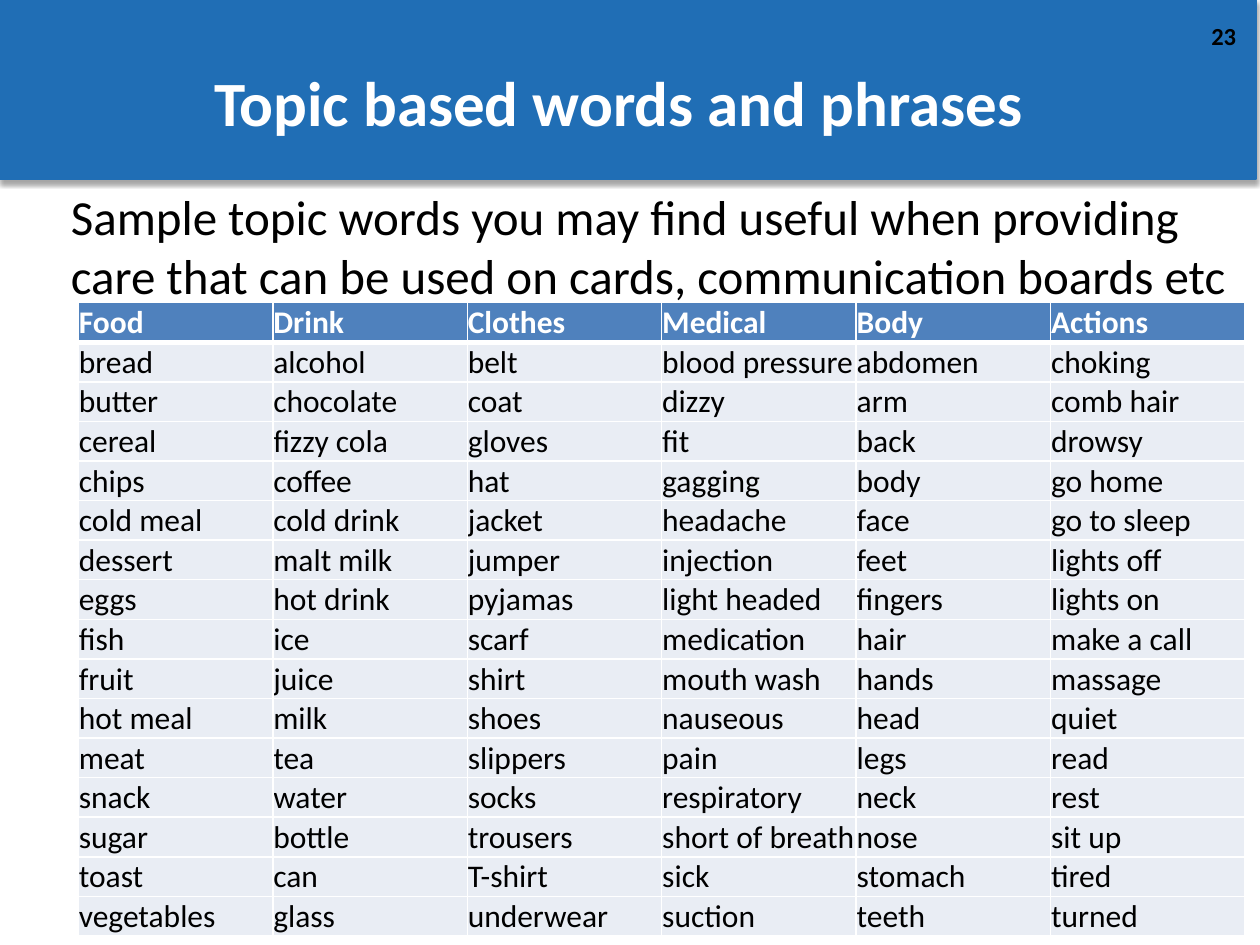
from lxml import etree
from pptx import Presentation
from pptx.dml.color import RGBColor
from pptx.enum.shapes import MSO_SHAPE
from pptx.enum.text import MSO_ANCHOR, PP_ALIGN
from pptx.oxml.ns import qn
from pptx.util import Cm, Pt

RECTANGLE = MSO_SHAPE.RECTANGLE
TOP, MIDDLE, BOTTOM = MSO_ANCHOR.TOP, MSO_ANCHOR.MIDDLE, MSO_ANCHOR.BOTTOM
LEFT, CENTER, RIGHT = PP_ALIGN.LEFT, PP_ALIGN.CENTER, PP_ALIGN.RIGHT

FONT = "Calibri"
BLACK, WHITE = "000000", "FFFFFF"
BANNER_BLUE, HEADER_BLUE, ROW_GREY = "206EB5", "4F81BD", "E9EDF4"

TOPICS = {
    "Food": ["bread", "butter", "cereal", "chips", "cold meal", "dessert", "eggs", "fish",
             "fruit", "hot meal", "meat", "snack", "sugar", "toast", "vegetables"],
    "Drink": ["alcohol", "chocolate", "fizzy cola", "coffee", "cold drink", "malt milk",
              "hot drink", "ice", "juice", "milk", "tea", "water", "bottle", "can", "glass"],
    "Clothes": ["belt", "coat", "gloves", "hat", "jacket", "jumper", "pyjamas", "scarf",
                "shirt", "shoes", "slippers", "socks", "trousers", "T-shirt", "underwear"],
    "Medical": ["blood pressure", "dizzy", "fit", "gagging", "headache", "injection",
                "light headed", "medication", "mouth wash", "nauseous", "pain",
                "respiratory", "short of breath", "sick", "suction"],
    "Body": ["abdomen", "arm", "back", "body", "face", "feet", "fingers", "hair",
             "hands", "head", "legs", "neck", "nose", "stomach", "teeth"],
    "Actions": ["choking", "comb hair", "drowsy", "go home", "go to sleep", "lights off",
                "lights on", "make a call", "massage", "quiet", "read", "rest", "sit up",
                "tired", "turned"],
}


def color(value):
    return RGBColor.from_string(value)


def style_paragraph(paragraph, size, font_color, bold=False, align=LEFT):
    paragraph.alignment = align
    font = paragraph.font
    font.name, font.size, font.bold = FONT, Pt(size), bold
    font.color.rgb = color(font_color)


def add_text(slide, box, text, size, font_color, bold=False, align=LEFT, anchor=TOP):
    shape = slide.shapes.add_textbox(*(Cm(length) for length in box))
    frame = shape.text_frame
    frame.word_wrap = True
    frame.vertical_anchor = anchor
    frame.text = text
    style_paragraph(frame.paragraphs[0], size, font_color, bold, align)


def add_shadow(shape):
    """Soft shadow straight below the shape."""
    shape.shadow.inherit = False
    effects = shape._element.spPr.find(qn("a:effectLst"))
    shadow = etree.SubElement(effects, qn("a:outerShdw"), blurRad=str(Pt(3.1)),
                              dist=str(Pt(1.8)), dir="5400000", rotWithShape="0")
    shade = etree.SubElement(shadow, qn("a:srgbClr"), val=BLACK)
    etree.SubElement(shade, qn("a:alpha"), val="35000")


def set_border(cell, side, width):
    line = etree.SubElement(cell._tc.get_or_add_tcPr(), qn(f"a:ln{side}"), w=str(Pt(width)))
    fill = etree.SubElement(line, qn("a:solidFill"))
    etree.SubElement(fill, qn("a:srgbClr"), val=WHITE)


def add_banner(slide, left, top, width, height):
    # Blue band
    band = slide.shapes.add_shape(RECTANGLE, Cm(left), Cm(top), Cm(width), Cm(height))
    band.fill.solid()
    band.fill.fore_color.rgb = color(BANNER_BLUE)
    band.line.color.rgb = color(BANNER_BLUE)
    band.line.width = Pt(0.75)
    add_shadow(band)
    # Slide number and title
    add_text(slide, (left + width - 1.19, top + 0.3, 1.04, 1.02), "23", 14, BLACK, True, RIGHT)
    add_text(slide, (left + 1.12, top + 1.31, width - 2.62, 1.47),
             "Topic based words and phrases", 36, WHITE, True, CENTER, MIDDLE)


def fill_cell(cell, text, row):
    is_header = row == 0
    for side, width in (("L", 1), ("R", 1), ("T", 3 if row == 1 else 1),
                        ("B", 3 if is_header else 1)):
        set_border(cell, side, width)
    cell.fill.solid()
    cell.fill.fore_color.rgb = color(HEADER_BLUE if is_header else ROW_GREY)
    cell.margin_left = cell.margin_right = cell.margin_top = Cm(0.01)
    cell.margin_bottom = 0
    cell.vertical_anchor = BOTTOM
    cell.text = text
    style_paragraph(cell.text_frame.paragraphs[0], 18, WHITE if is_header else BLACK, is_header)


def add_topic_table(slide, left, top, width, height):
    columns = [[topic, *words] for topic, words in TOPICS.items()]
    table = slide.shapes.add_table(len(columns[0]), len(columns), Cm(left), Cm(top),
                                   Cm(width), Cm(height)).table
    for column, entries in enumerate(columns):
        for row, text in enumerate(entries):
            fill_cell(table.cell(row, column), text, row)


def main():
    presentation = Presentation()
    presentation.slide_width, presentation.slide_height = Cm(25.4), Cm(19.05)
    slide = presentation.slides.add_slide(presentation.slide_layouts[6])

    add_banner(slide, 0, 0, 25.32, 3.61)
    # Introduction
    add_text(slide, (1.18, 3.63, 23.93, 12.4),
             "Sample topic words you may find useful when providing care that can be used "
             "on cards, communication boards etc", 28, BLACK)
    add_topic_table(slide, 1.58, 6.1, 23.52, 12.78)

    presentation.save("out.pptx")


if __name__ == "__main__":
    main()
